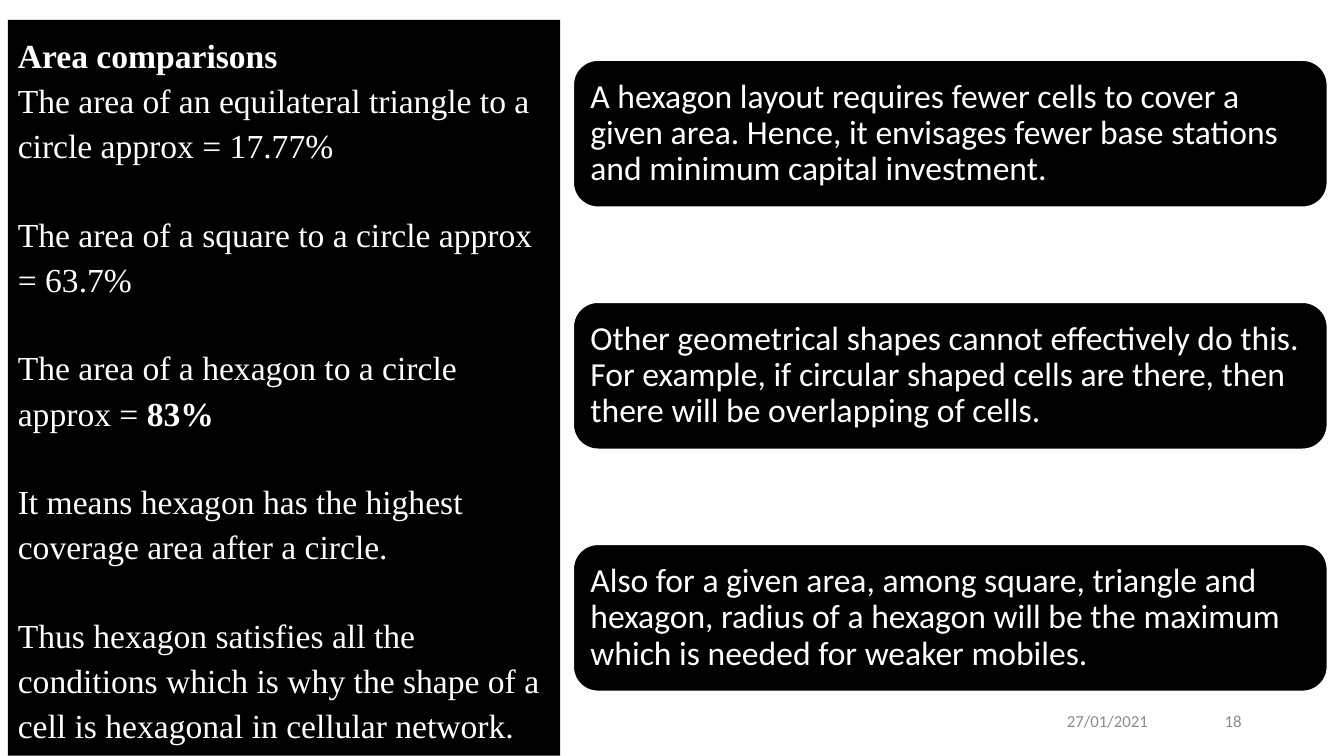
from pptx import Presentation
from pptx.dml.color import RGBColor
from pptx.enum.shapes import MSO_SHAPE
from pptx.enum.text import MSO_ANCHOR, PP_ALIGN
from pptx.util import Cm, Pt

# Content: each paragraph is a list of (text, bold) spans
COMPARISONS = [
    [("Area comparisons", True)],
    [("The area of an equilateral triangle to a circle approx = 17.77%", False)],
    [("The area of a square to a circle approx = 63.7%", False)],
    [("The area of a hexagon to a circle approx = ", False), ("83%", True)],
    [("It means hexagon has the highest coverage area after a circle.", False)],
    [("Thus hexagon satisfies all the conditions which is why the shape of a "
      "cell is hexagonal in cellular network.", False)],
]
REASONS = [
    "A hexagon layout requires fewer cells to cover a given area. Hence, it "
    "envisages fewer base stations and minimum capital investment.",
    "Other geometrical shapes cannot effectively do this. For example, if "
    "circular shaped cells are there, then there will be overlapping of cells.",
    "Also for a given area, among square, triangle and hexagon, radius of a "
    "hexagon will be the maximum which is needed for weaker mobiles.",
]
# Footer: text, left, width in cm
FOOTER = [("27/01/2021", 21.56, 7.62), ("18", 29.79, 1.75)]

COLOURS = {"panel": "000000", "text": "FFFFFF", "footer": "8C8C8C"}
CARD_TOP, CARD_PITCH = 1.52, 6.1


def colour(name):
    return RGBColor.from_string(COLOURS[name])


def style(span, font, size, colour_name, bold=False):
    span.font.name = font
    span.font.size = Pt(size)
    span.font.bold = bold
    span.font.color.rgb = colour(colour_name)


def add_panel(page, kind, left, top, width, height):
    box = page.shapes.add_shape(kind, Cm(left), Cm(top), Cm(width), Cm(height))
    box.shadow.inherit = False
    box.fill.solid()
    box.fill.fore_color.rgb = colour("panel")
    box.text_frame.word_wrap = True
    box.text_frame.vertical_anchor = MSO_ANCHOR.MIDDLE
    return box


def add_comparisons(page):
    box = add_panel(page, MSO_SHAPE.RECTANGLE, 0.2, 0.5, 13.92, 18.54)
    box.line.fill.background()
    frame = box.text_frame
    for index, spans in enumerate(COMPARISONS):
        para = frame.add_paragraph() if index else frame.paragraphs[0]
        para.alignment = PP_ALIGN.LEFT
        para.line_spacing = 1.12
        # One line of space between statements, none under the heading
        para.space_before = Pt(31 if index > 1 else 0)
        for text, bold in spans:
            span = para.add_run()
            span.text = text
            style(span, "Times New Roman", 24, "text", bold)


def add_reason(page, index, text):
    top = CARD_TOP + index * CARD_PITCH
    box = add_panel(page, MSO_SHAPE.ROUNDED_RECTANGLE, 14.45, top, 19, 3.7)
    box.line.color.rgb = colour("text")
    box.line.width = Pt(1)
    frame = box.text_frame
    frame.margin_left = frame.margin_right = Cm(0.25)
    frame.margin_top = frame.margin_bottom = Cm(0.25)
    frame.text = text
    para = frame.paragraphs[0]
    para.alignment = PP_ALIGN.LEFT
    para.line_spacing = 0.9
    style(para.runs[0], "Calibri", 24, "text")


def add_footer(page, text, left, width):
    box = page.shapes.add_textbox(Cm(left), Cm(17.65), Cm(width), Cm(1.02))
    frame = box.text_frame
    frame.word_wrap = True
    frame.vertical_anchor = MSO_ANCHOR.MIDDLE
    frame.text = text
    para = frame.paragraphs[0]
    para.alignment = PP_ALIGN.RIGHT
    style(para.runs[0], "Calibri", 12, "footer")


def main():
    deck = Presentation()
    deck.slide_width, deck.slide_height = Cm(33.87), Cm(19.05)
    page = deck.slides.add_slide(deck.slide_layouts[6])
    add_comparisons(page)
    for text, left, width in FOOTER:
        add_footer(page, text, left, width)
    for index, text in enumerate(REASONS):
        add_reason(page, index, text)
    deck.save("out.pptx")


if __name__ == "__main__":
    main()
